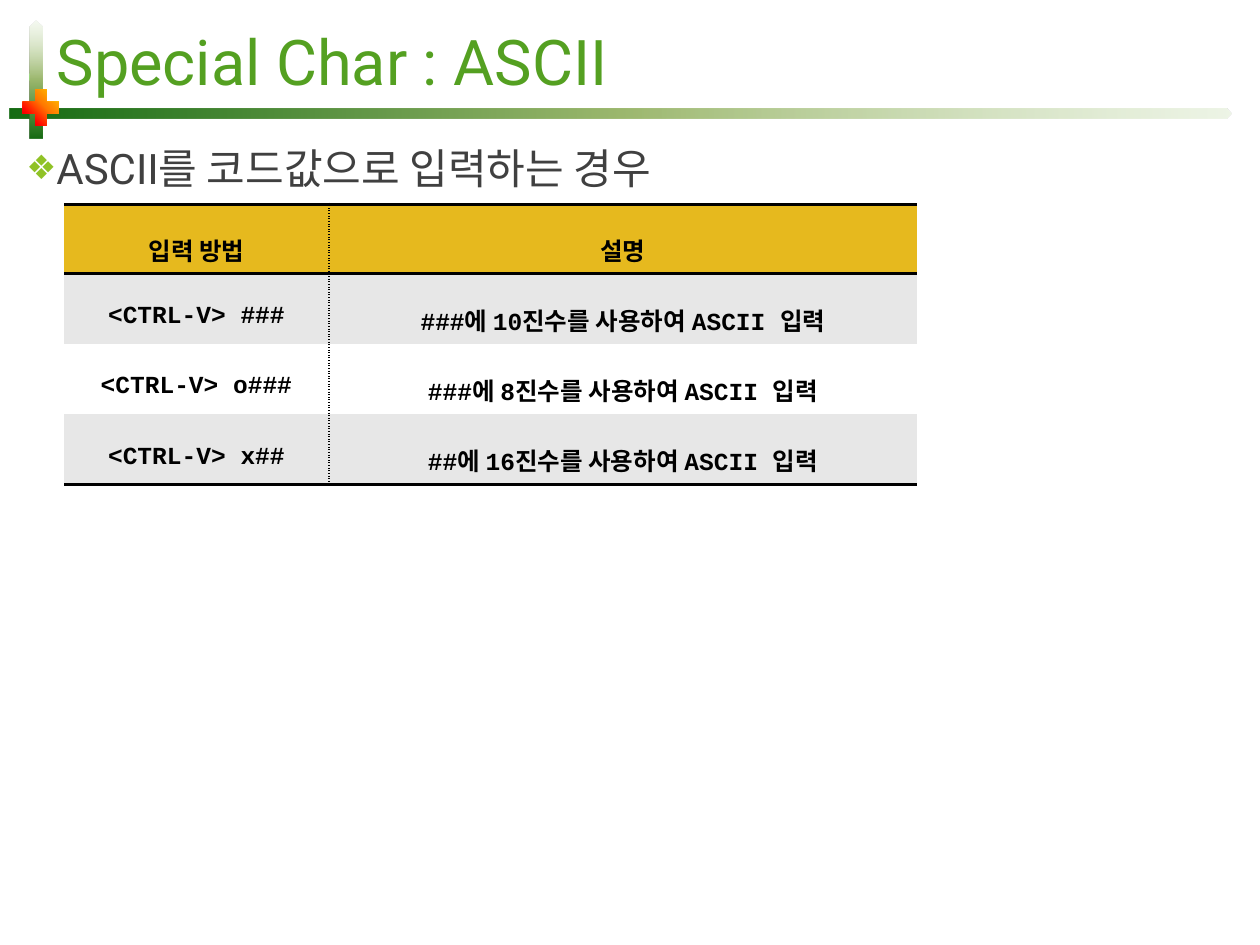
from lxml import etree
from pptx import Presentation
from pptx.dml.color import RGBColor
from pptx.enum import shapes, text
from pptx.oxml import parse_xml
from pptx.oxml.ns import nsdecls, qn
from pptx.util import Inches, Pt

GREEN = RGBColor(0x54, 0xA0, 0x21)
BULLET_GREEN = RGBColor(0x90, 0xC2, 0x26)
DARK_GREY = RGBColor(0x40, 0x40, 0x40)
BLACK = RGBColor(0x00, 0x00, 0x00)
WHITE = RGBColor(0xFF, 0xFF, 0xFF)
GOLD = RGBColor(0xE6, 0xB9, 0x1E)
LIGHT_GREY = RGBColor(0xE7, 0xE7, 0xE7)

# Gradient stops: position, colour and opacity, all but the colour in percent
FADE = [(50, RGBColor(0x9C, 0xB8, 0x6E), 100), (100, RGBColor(0x15, 0x6B, 0x13), 100)]
PALE = RGBColor(0xDD, 0xEB, 0xCF)
FIRE = [
    (0, RGBColor(0xFF, 0xF2, 0x00), 100),
    (45, RGBColor(0xFF, 0x7A, 0x00), 100),
    (70, RGBColor(0xFF, 0x03, 0x00), 100),
    (100, RGBColor(0x4D, 0x08, 0x08), 100),
]

ROWS = [
    ("입력 방법", "설명"),
    ("<CTRL-V> ###", "###에 10진수를 사용하여 ASCII 입력"),
    ("<CTRL-V> o###", "###에 8진수를 사용하여 ASCII 입력"),
    ("<CTRL-V> x##", "##에 16진수를 사용하여 ASCII 입력"),
]
ROW_FILLS = [GOLD, LIGHT_GREY, WHITE, LIGHT_GREY]
COLUMN_WIDTHS = [2.1, 4.67]
NO_STYLE = "{2D5ABB26-0587-4C30-8999-92F81FD0307C}"


def place(shape, box):
    shape.left, shape.top, shape.width, shape.height = map(Inches, box)


def set_font(paragraph, name, size, color, bold=False):
    font = paragraph.font
    font.name, font.size, font.bold = name, Pt(size), bold
    font.color.rgb = color


def fill_gradient(shape, stops, angle):
    """Fill with a linear gradient; the angle runs clockwise in degrees."""
    stop_xml = "".join(
        f'<a:gs pos="{pos * 1000}"><a:srgbClr val="{color}">'
        f'<a:alpha val="{opacity * 1000}"/></a:srgbClr></a:gs>'
        for pos, color, opacity in stops
    )
    gradient = parse_xml(
        f'<a:gradFill {nsdecls("a")} rotWithShape="1"><a:gsLst>{stop_xml}</a:gsLst>'
        f'<a:lin ang="{angle * 60000}" scaled="0"/></a:gradFill>'
    )
    shape.element.spPr.find(qn("a:prstGeom")).addnext(gradient)


def add_ornament(slide):
    """Draw the two crossing bars and the plus sign behind the text."""
    bar, plus = shapes.MSO_SHAPE.PENTAGON, shapes.MSO_SHAPE.MATH_PLUS
    parts = [
        (bar, (0.08, 0.86, 9.69, 0.08), 0, [(0, PALE, 50)] + FADE, 180),
        (bar, (-0.18, 0.58, 0.93, 0.1), 270, [(0, PALE, 30)] + FADE, 180),
        (plus, (0.13, 0.66, 0.39, 0.39), 0, FIRE, 135),
    ]
    for depth, (kind, box, rotation, stops, angle) in enumerate(parts, start=2):
        shape = slide.shapes.add_shape(kind, *map(Inches, box))
        shape.rotation = rotation
        shape.shadow.inherit = False
        shape.line.fill.background()
        fill_gradient(shape, stops, angle)
        slide.shapes.element.insert(depth, shape.element)


def write_title(title, box):
    place(title, box)
    frame = title.text_frame
    frame.text = "Special Char : ASCII"
    frame.auto_size = text.MSO_AUTO_SIZE.NONE
    frame.vertical_anchor = text.MSO_ANCHOR.MIDDLE
    frame.paragraphs[0].alignment = text.PP_ALIGN.LEFT
    set_font(frame.paragraphs[0], "Roboto", 36, GREEN)


def write_body(body, box):
    place(body, box)
    frame = body.text_frame
    frame.text = "ASCII를 코드값으로 입력하는 경우"
    frame.auto_size = text.MSO_AUTO_SIZE.NONE
    point = frame.paragraphs[0]
    point.space_before = Pt(10)
    set_font(point, "Roboto", 24, DARK_GREY)
    properties = point._p.get_or_add_pPr()
    properties.set("marL", str(Inches(0.2)))
    properties.set("indent", str(Inches(-0.38)))
    bullet = parse_xml(
        f'<a:pPr {nsdecls("a")}><a:buClr><a:srgbClr val="{BULLET_GREEN}"/></a:buClr>'
        '<a:buSzPct val="80000"/><a:buFont typeface="Wingdings"/><a:buChar char="❖"/></a:pPr>'
    )
    bullet.remove(bullet.find(qn("a:buFont")))
    position = list(properties).index(properties.find(qn("a:defRPr")))
    properties[position:position] = list(bullet)


def add_border(cell, side, width, dash="solid"):
    line = etree.SubElement(cell._tc.get_or_add_tcPr(), qn(f"a:ln{side}"), w=str(Pt(width)))
    fill = etree.SubElement(line, qn("a:solidFill"))
    etree.SubElement(fill, qn("a:srgbClr"), val=str(BLACK))
    etree.SubElement(line, qn("a:prstDash"), val=dash)


def add_input_table(slide, box):
    frame = slide.shapes.add_table(len(ROWS), len(COLUMN_WIDTHS), *map(Inches, box))
    table = frame.table
    table.first_row = table.horz_banding = False
    table._tbl.tblPr.find(qn("a:tableStyleId")).text = NO_STYLE
    for column, width in zip(table.columns, COLUMN_WIDTHS):
        column.width = Inches(width)
    for r, (row, fill) in enumerate(zip(ROWS, ROW_FILLS)):
        for c, words in enumerate(row):
            cell = table.cell(r, c)
            add_border(cell, "R" if c == 0 else "L", 1, "sysDot")
            if r == 0:
                add_border(cell, "T", 2)
            if r in (0, len(ROWS) - 1):
                add_border(cell, "B", 2)
            cell.fill.solid()
            cell.fill.fore_color.rgb = fill
            cell.vertical_anchor = text.MSO_ANCHOR.MIDDLE
            cell.text = words
            paragraph = cell.text_frame.paragraphs[0]
            paragraph.alignment = text.PP_ALIGN.CENTER
            paragraph.line_spacing = 1.6
            set_font(paragraph, "Courier New", 14, BLACK, bold=True)


def main():
    deck = Presentation()
    deck.slide_width, deck.slide_height = Inches(10), Inches(7.5)
    slide = deck.slides.add_slide(deck.slide_layouts[1])
    add_ornament(slide)
    write_title(slide.shapes.title, (0.35, 0.1, 9.41, 0.76))
    write_body(slide.placeholders[1], (0.11, 1.08, 9.66, 4.8))
    add_input_table(slide, (0.51, 1.62, 6.77, 1.89))
    deck.save("out.pptx")


if __name__ == "__main__":
    main()
